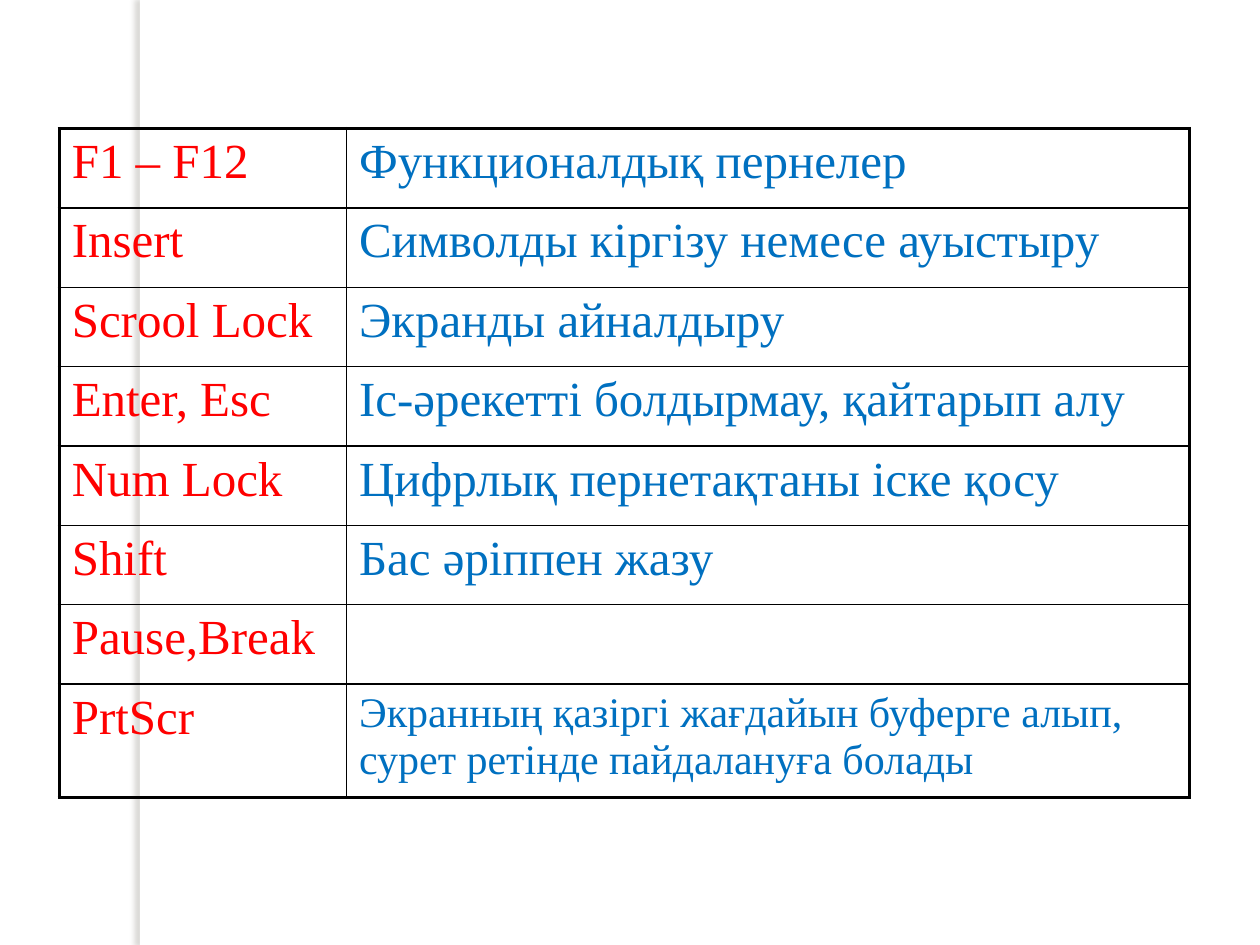
from lxml import etree
from pptx import Presentation
from pptx.dml.color import RGBColor
from pptx.enum.shapes import MSO_SHAPE
from pptx.oxml import parse_xml
from pptx.oxml.ns import qn
from pptx.util import Inches, Pt

RECTANGLE = MSO_SHAPE.RECTANGLE
FONT = "Times New Roman"
COLORS = {"strip": "FFFFFF", "shadow": "736F63", "border": "000000",
          "key": "FF0000", "meaning": "0070C0"}
THIN, THICK = 1, 2.25
NAMESPACE = "http://schemas.openxmlformats.org/drawingml/2006/main"
KEYS = [
    ("F1 – F12", "Функционалдық пернелер"),
    ("Insert", "Символды кіргізу немесе ауыстыру"),
    ("Scrool Lock", "Экранды айналдыру"),
    ("Enter, Esc", "Іс-әрекетті болдырмау, қайтарып алу"),
    ("Num Lock", "Цифрлық пернетақтаны іске қосу"),
    ("Shift", "Бас әріппен жазу"),
    ("Pause,Break", ""),
    ("PrtScr", "Экранның қазіргі жағдайын буферге алып, "
               "сурет ретінде пайдалануға болады"),
]


def add_strip(slide):
    """Add the full-height white strip with a soft shadow on its left."""
    shape = slide.shapes.add_shape(RECTANGLE, Inches(1.11), 0, Inches(0.08), Inches(7.5))
    shape.fill.solid()
    shape.fill.fore_color.rgb = RGBColor.from_string(COLORS["strip"])
    shape.line.fill.background()
    shape.shadow.inherit = False
    effects = shape._element.spPr.find(qn("a:effectLst"))
    effects.append(parse_xml(
        f'<a:outerShdw xmlns:a="{NAMESPACE}" blurRad="{Pt(3)}" dist="{Pt(3)}" '
        f'dir="10800000" algn="ctr" rotWithShape="0"><a:srgbClr val="{COLORS["shadow"]}">'
        '<a:alpha val="25000"/></a:srgbClr></a:outerShdw>'))


def set_borders(cell, left, right, top, bottom):
    properties = cell._tc.get_or_add_tcPr()
    for side, width in zip("LRTB", (left, right, top, bottom)):
        line = etree.SubElement(properties, qn(f"a:ln{side}"), w=str(Pt(width)))
        fill = etree.SubElement(line, qn("a:solidFill"))
        etree.SubElement(fill, qn("a:srgbClr"), val=COLORS["border"])


def set_text(cell, text, size, color):
    paragraph = cell.text_frame.paragraphs[0]
    paragraph.text = text
    spacing = etree.SubElement(paragraph._p.get_or_add_pPr(), qn("a:spcBef"))
    etree.SubElement(spacing, qn("a:spcPct"), val="20000")
    for run in paragraph.runs:
        run.font.name = FONT
        run.font.size = Pt(size)
        run.font.color.rgb = RGBColor.from_string(color)


def add_key_table(slide):
    last = len(KEYS) - 1
    table = slide.shapes.add_table(len(KEYS), 2, Inches(0.47), Inches(1.02),
                                   Inches(8.98), Inches(5.34)).table
    table.first_row = False
    table.horz_banding = False
    for column, width in zip(table.columns, (2.28, 6.69)):
        column.width = Inches(width)
    for index, texts in enumerate(KEYS):
        table.rows[index].height = Inches(0.9 if index == last else 0.63)
        for side, text in enumerate(texts):
            cell = table.cell(index, side)
            set_borders(cell,
                        left=THIN if side else THICK,
                        right=THICK if side else THIN,
                        top=THIN if index else THICK,
                        bottom=THICK if index == last else THIN)
            cell.fill.background()
            size = 24 if side and index == last else 28
            set_text(cell, text, size, COLORS["meaning" if side else "key"])


def main():
    presentation = Presentation()
    presentation.slide_width = Inches(10)
    presentation.slide_height = Inches(7.5)
    slide = presentation.slides.add_slide(presentation.slide_layouts[6])
    add_strip(slide)
    add_key_table(slide)
    presentation.save("out.pptx")


if __name__ == "__main__":
    main()
